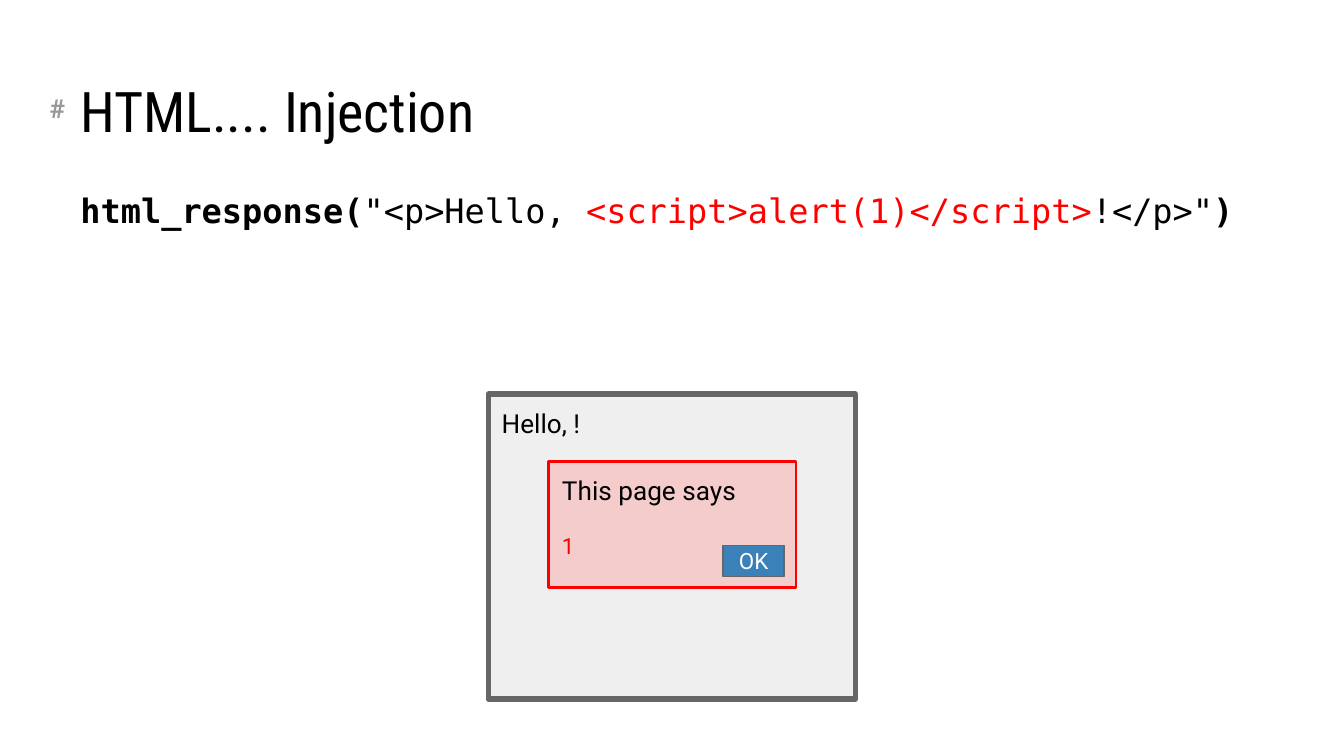
from pptx import Presentation
from pptx.dml.color import RGBColor
from pptx.enum.shapes import MSO_SHAPE
from pptx.enum.text import MSO_ANCHOR as Anchor, PP_ALIGN as Align
from pptx.util import Pt


class Theme:
    BLACK, WHITE, RED = "000000", "FFFFFF", "FF0000"
    HASH, FRAME, PAGE = "999999", "666666", "EFEFEF"
    ALERT, BUTTON = "F4CCCC", "3A81BA"
    SANS, TITLE_FONT, MONO = "Roboto", "Roboto Condensed", "DejaVu Sans Mono"
    TITLE, CODE, TEXT, SMALL = 30, 18, 14, 12
    INSET = 7.2


# Content: code runs are (text, colour, bold)
TITLE = "HTML.... Injection"
CODE = [
    ("html_response(", Theme.BLACK, True),
    ('"<p>Hello, ', Theme.BLACK, False),
    ("<script>alert(1)</script>", Theme.RED, False),
    ('!</p>"', Theme.BLACK, False),
    (")", Theme.BLACK, True),
]
PAGE_TEXT = "Hello, !"
ALERT_TITLE, ALERT_VALUE = "This page says", "1"
BUTTON_TEXT = "OK"

# Layout: left, top, width, height in points
HASH_BOX = (19.44, 42.5, 22.3, 33.8)
TITLE_BOX = (36, 16.6, 648, 67.7)
CODE_BOX = (36, 94.3, 648, 293)
PAGE_BOX = (261.7, 211.2, 196.6, 163.4)
ALERT_BOX = (294, 247.2, 132.5, 67.7)
BUTTON_BOX = (387.4, 292.3, 32.7, 16.5)


def rgb(value):
    return RGBColor.from_string(value)


def style(font, name, size, color=None, bold=False):
    font.name, font.size, font.bold = name, Pt(size), bold
    if color:
        font.color.rgb = rgb(color)


def setup_frame(sp, anchor):
    tf = sp.text_frame
    tf.word_wrap, tf.vertical_anchor = True, anchor
    tf.margin_left = tf.margin_right = Pt(Theme.INSET)
    tf.margin_top = tf.margin_bottom = Pt(Theme.INSET)
    return tf


def add_text(s, box, anchor=Anchor.TOP):
    return setup_frame(s.shapes.add_textbox(*map(Pt, box)), anchor)


def add_rect(s, box, fill, line, width, anchor=Anchor.TOP):
    sp = s.shapes.add_shape(MSO_SHAPE.RECTANGLE, *map(Pt, box))
    sp.shadow.inherit = False
    sp.fill.solid()
    sp.fill.fore_color.rgb = rgb(fill)
    sp.line.color.rgb = rgb(line)
    sp.line.width = Pt(width)
    return setup_frame(sp, anchor)


def write(p, text, name, size, color, bold=False, align=Align.LEFT):
    p.text, p.alignment = text, align
    style(p.font, name, size, color, bold)


prs = Presentation()
prs.slide_width, prs.slide_height = Pt(720), Pt(405)
s = prs.slides.add_slide(prs.slide_layouts[6])

# Heading with its hash mark
tf = add_text(s, HASH_BOX)
write(tf.paragraphs[0], "#", Theme.SANS, Theme.TEXT, Theme.HASH, bold=True)
tf = add_text(s, TITLE_BOX, Anchor.BOTTOM)
write(tf.paragraphs[0], TITLE, Theme.TITLE_FONT, Theme.TITLE, Theme.BLACK)

# Line of code
p = add_text(s, CODE_BOX).paragraphs[0]
p.space_after = Pt(10)
for text, color, bold in CODE:
    r = p.add_run()
    r.text = text
    style(r.font, Theme.MONO, Theme.CODE, color, bold)

# Browser page
tf = add_rect(s, PAGE_BOX, Theme.PAGE, Theme.FRAME, 3)
write(tf.paragraphs[0], PAGE_TEXT, Theme.SANS, Theme.TEXT, Theme.BLACK)

# Alert dialog and its button
tf = add_rect(s, ALERT_BOX, Theme.ALERT, Theme.RED, 1.5)
write(tf.paragraphs[0], ALERT_TITLE, Theme.SANS, Theme.TEXT, Theme.BLACK)
p = tf.add_paragraph()
write(p, ALERT_VALUE, Theme.SANS, Theme.SMALL, Theme.RED)
p.space_before = Pt(14)
tf = add_rect(s, BUTTON_BOX, Theme.BUTTON, Theme.FRAME, 0.75, Anchor.MIDDLE)
write(tf.paragraphs[0], BUTTON_TEXT, Theme.SANS, Theme.SMALL, Theme.WHITE,
      align=Align.CENTER)

prs.save("out.pptx")
